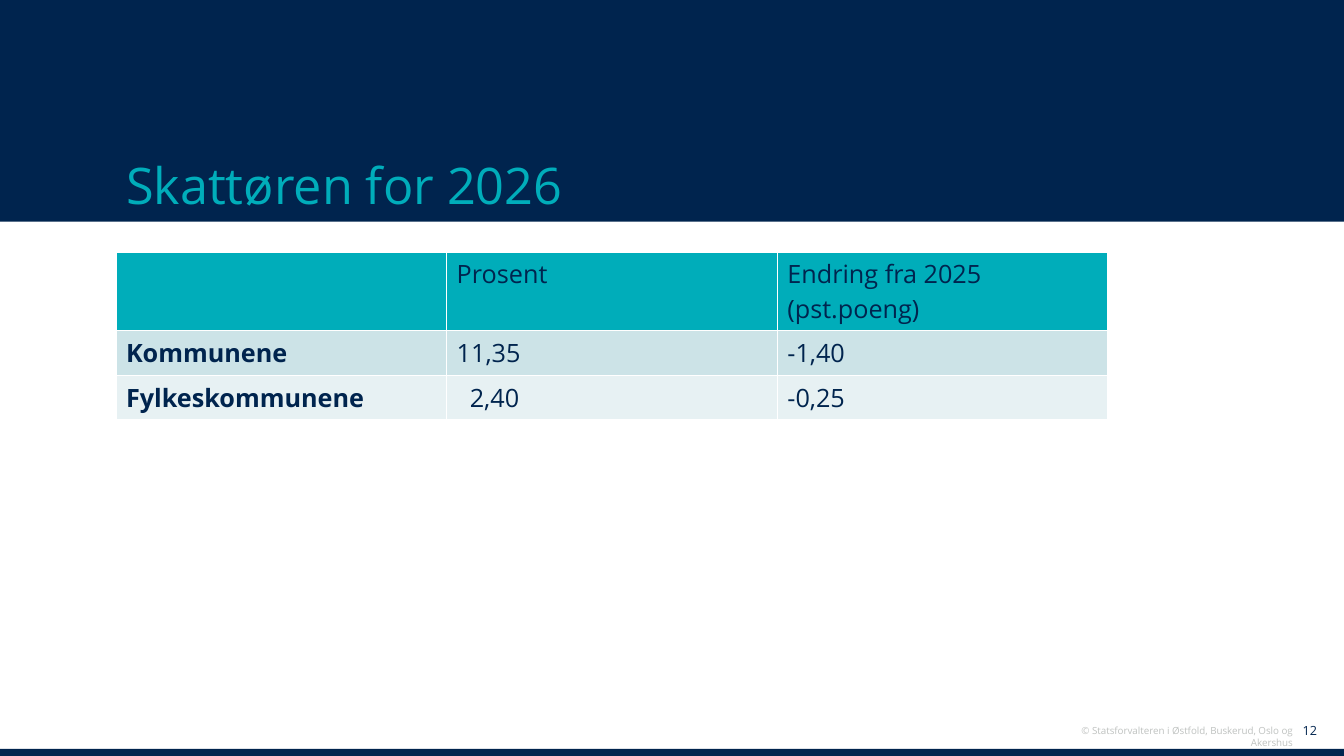
from pptx import Presentation
from pptx.dml.color import RGBColor as RGB
from pptx.enum.shapes import MSO_SHAPE as Shape
from pptx.enum.text import MSO_ANCHOR as Anchor, MSO_AUTO_SIZE as Fit, PP_ALIGN as Align
from pptx.oxml import parse_xml
from pptx.oxml.ns import nsdecls
from pptx.util import Inches, Pt

HUE = {"navy": "00244E", "teal": "00ADBA", "pale": "CCE3E7",
       "mist": "E7F1F3", "grey": "BFC2C0", "white": "FFFFFF"}
WIDE, HIGH = 13.33, 7.5
LEFT = 1.15
ROWS = [
    ("", "Prosent", "Endring fra 2025 (pst.poeng)"),
    ("Kommunene", "11,35", "-1,40"),
    ("Fylkeskommunene", "2,40", "-0,25"),
]
TALL = (0.78, 0.44, 0.44)


def color(name):
    return RGB.from_string(HUE[name])


def style(para, size, hue, bold=False, align=Align.LEFT):
    para.alignment = align
    for key, value in {"name": "Open Sans", "size": Pt(size), "bold": bold}.items():
        setattr(para.font, key, value)
    para.font.color.rgb = color(hue)


def band(slide, box):
    bar = slide.shapes.add_shape(Shape.RECTANGLE, *map(Inches, box))
    bar.shadow.inherit = False
    bar.fill.solid()
    bar.fill.fore_color.rgb = color("navy")
    bar.line.fill.background()


def header(slide, box):
    band(slide, box)
    x, y, w, h = box
    title = slide.shapes.title
    place = (x + LEFT, y + 0.95, w - 2 * LEFT, h - 1.02)
    for key, value in zip(("left", "top", "width", "height"), place):
        setattr(title, key, Inches(value))
    frame = title.text_frame
    for key, value in {"text": "Skattøren for 2026", "auto_size": Fit.NONE,
                       "vertical_anchor": Anchor.BOTTOM, "margin_bottom": 0}.items():
        setattr(frame, key, value)
    style(frame.paragraphs[0], 36, "teal")
    # Bring the title in front of its band
    slide.shapes._spTree.append(title._element)


def edge(cell):
    props = cell._tc.get_or_add_tcPr()
    for spot, side in enumerate(("lnL", "lnR", "lnT", "lnB")):
        props.insert(spot, parse_xml(
            f'<a:{side} {nsdecls("a")} w="12700"><a:solidFill>'
            f'<a:srgbClr val="{HUE["white"]}"/></a:solidFill></a:{side}>'))


def rates(slide, box):
    grid = slide.shapes.add_table(len(ROWS), len(ROWS[0]), *map(Inches, box)).table
    for col in grid.columns:
        col.width = Inches(box[2] / len(ROWS[0]))
    for r, (texts, fill) in enumerate(zip(ROWS, ("teal", "pale", "mist"))):
        grid.rows[r].height = Inches(TALL[r])
        for c, text in enumerate(texts):
            cell = grid.cell(r, c)
            cell.text = text
            cell.fill.solid()
            cell.fill.fore_color.rgb = color(fill)
            style(cell.text_frame.paragraphs[0], 18, "navy", bold=r > 0 and c == 0)
            edge(cell)
    # Line up the shorter figure with the one above
    grid.cell(2, 1).margin_left = Inches(0.23)


def note(slide, box, text, size, hue, anchor):
    frame = slide.shapes.add_textbox(*map(Inches, box)).text_frame
    for key, value in {"text": text, "word_wrap": True,
                       "vertical_anchor": anchor}.items():
        setattr(frame, key, value)
    style(frame.paragraphs[0], size, hue, align=Align.RIGHT)


def footer(slide, box):
    x, y, w, h = box
    band(slide, (x, y + h - 0.07, w, 0.07))
    note(slide, (x + w - 0.71, y, 0.54, 0.26), "12", 9, "navy", Anchor.MIDDLE)
    note(slide, (x + w - 3.13, y + 0.02, 2.72, 0.22),
         "© Statsforvalteren i Østfold, Buskerud, Oslo og Akershus",
         7, "grey", Anchor.TOP)


def main():
    deck = Presentation()
    deck.slide_width, deck.slide_height = Inches(WIDE), Inches(HIGH)
    slide = deck.slides.add_slide(deck.slide_layouts[5])
    header(slide, (0, 0, WIDE, 2.2))
    rates(slide, (LEFT, 2.5, 9.84, sum(TALL)))
    footer(slide, (0, 7.12, WIDE, HIGH - 7.12))
    deck.save("out.pptx")


if __name__ == "__main__":
    main()
